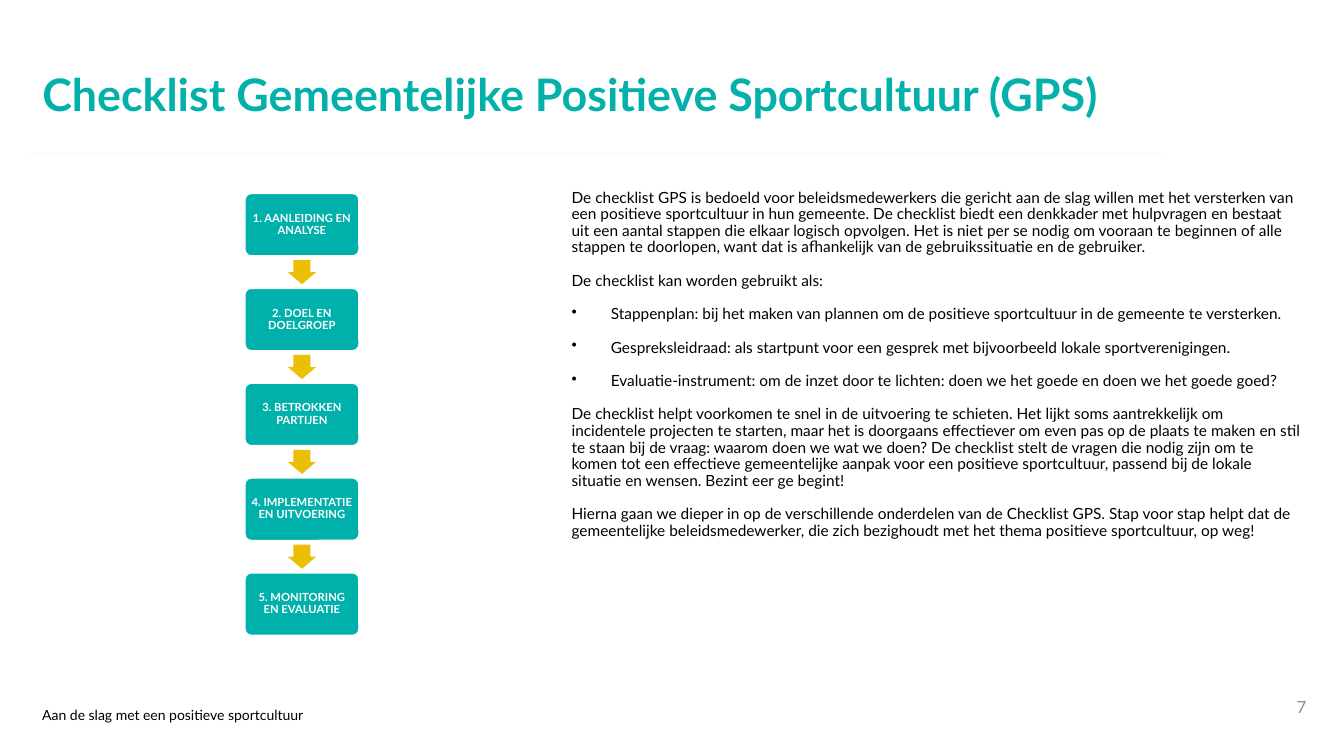
"""Build the slide that introduces the GPS checklist and its five steps."""
from lxml.etree import SubElement
from pptx import Presentation
from pptx.dml.color import RGBColor
from pptx.enum.shapes import MSO_CONNECTOR, MSO_SHAPE
from pptx.enum.text import MSO_ANCHOR, MSO_AUTO_SIZE, PP_ALIGN
from pptx.oxml.ns import qn
from pptx.util import Pt

TITLE_TEAL = RGBColor(0x03, 0xB0, 0xAA)
STEP_TEAL = RGBColor(0x00, 0xB1, 0xAB)
YELLOW = RGBColor(0xEA, 0xBF, 0x06)
PALE = RGBColor(0xF7, 0xF6, 0xF5)
GREY = RGBColor(0x8C, 0x8C, 0x8C)
BLACK = RGBColor(0, 0, 0)
WHITE = RGBColor(255, 255, 255)

STEPS = [
    "1. AANLEIDING EN ANALYSE",
    "2. DOEL EN DOELGROEP",
    "3. BETROKKEN PARTIJEN",
    "4. IMPLEMENTATIE EN UITVOERING",
    "5. MONITORING EN EVALUATIE",
]
STEP_LEFT, STEP_TOP, STEP_WIDTH, STEP_HEIGHT, STEP_PITCH = 175, 138.2, 81.4, 44.6, 67.75
ARROW_WIDTH, ARROW_HEIGHT, ARROW_OFFSET = 20.2, 17.2, 47.6

BODY = [
    (False, "De checklist GPS is bedoeld voor beleidsmedewerkers die gericht aan de slag willen "
            "met het versterken van een positieve sportcultuur in hun gemeente. De checklist biedt "
            "een denkkader met hulpvragen en bestaat uit een aantal stappen die elkaar logisch "
            "opvolgen. Het is niet per se nodig om vooraan te beginnen of alle stappen te doorlopen, "
            "want dat is afhankelijk van de gebruikssituatie en de gebruiker."),
    (False, "De checklist kan worden gebruikt als:"),
    (True, "Stappenplan: bij het maken van plannen om de positieve sportcultuur in de gemeente "
           "te versterken."),
    (True, "Gespreksleidraad: als startpunt voor een gesprek met bijvoorbeeld lokale "
           "sportverenigingen."),
    (True, "Evaluatie-instrument: om de inzet door te lichten: doen we het goede en doen we het "
           "goede goed?"),
    (False, "De checklist helpt voorkomen te snel in de uitvoering te schieten. Het lijkt soms "
            "aantrekkelijk om incidentele projecten te starten, maar het is doorgaans effectiever "
            "om even pas op de plaats te maken en stil te staan bij de vraag: waarom doen we wat we "
            "doen? De checklist stelt de vragen die nodig zijn om te komen tot een effectieve "
            "gemeentelijke aanpak voor een positieve sportcultuur, passend bij de lokale situatie "
            "en wensen. Bezint eer ge begint!"),
    (False, "Hierna gaan we dieper in op de verschillende onderdelen van de Checklist GPS. Stap "
            "voor stap helpt dat de gemeentelijke beleidsmedewerker, die zich bezighoudt met het "
            "thema positieve sportcultuur, op weg!"),
]


def set_frame(shape, inset, anchor):
    frame = shape.text_frame
    frame.word_wrap = True
    frame.auto_size = MSO_AUTO_SIZE.NONE
    frame.vertical_anchor = anchor
    frame.margin_left = frame.margin_right = Pt(inset)
    frame.margin_top = frame.margin_bottom = Pt(inset)
    return frame


def write(para, text, size, color, bold=False, align=PP_ALIGN.LEFT, spacing=0.9):
    para.alignment = align
    para.line_spacing = spacing
    span = para.add_run()
    span.text = text
    span.font.name = "Lato"
    span.font.size = Pt(size)
    span.font.bold = bold
    span.font.color.rgb = color


deck = Presentation()
deck.slide_width, deck.slide_height = Pt(960), Pt(540)
page = deck.slides.add_slide(deck.slide_layouts[5])
shapes = page.shapes

rule = shapes.add_connector(MSO_CONNECTOR.STRAIGHT, Pt(22.3), Pt(109.5), Pt(830.2), Pt(109.5))
rule.line.color.rgb = PALE
rule.line.width = Pt(0.5)
SubElement(rule.element.spPr, qn("a:effectLst"))

title = shapes.title
title.left, title.top, title.width, title.height = Pt(30.2), Pt(56.2), Pt(800), Pt(26)
frame = set_frame(title, 0, MSO_ANCHOR.MIDDLE)
write(frame.paragraphs[0], "Checklist Gemeentelijke Positieve Sportcultuur (GPS)", 32, TITLE_TEAL, bold=True)

for index, step in enumerate(STEPS):
    top = STEP_TOP + index * STEP_PITCH
    box = shapes.add_shape(MSO_SHAPE.ROUNDED_RECTANGLE, Pt(STEP_LEFT), Pt(top),
                           Pt(STEP_WIDTH), Pt(STEP_HEIGHT))
    box.adjustments[0] = 0.1
    box.shadow.inherit = False
    box.fill.solid()
    box.fill.fore_color.rgb = STEP_TEAL
    box.line.color.rgb = WHITE
    box.line.width = Pt(1)
    frame = set_frame(box, 2.2, MSO_ANCHOR.MIDDLE)
    write(frame.paragraphs[0], step, 8, WHITE, bold=True, align=PP_ALIGN.CENTER)
    if index < len(STEPS) - 1:
        arrow = shapes.add_shape(MSO_SHAPE.DOWN_ARROW,
                                 Pt(STEP_LEFT + (STEP_WIDTH - ARROW_WIDTH) / 2),
                                 Pt(top + ARROW_OFFSET), Pt(ARROW_WIDTH), Pt(ARROW_HEIGHT))
        arrow.adjustments[0] = 0.6
        arrow.adjustments[1] = 0.5
        arrow.shadow.inherit = False
        arrow.fill.solid()
        arrow.fill.fore_color.rgb = YELLOW
        arrow.line.fill.background()

body = shapes.add_textbox(Pt(405.4), Pt(132.6), Pt(527.8), Pt(351))
frame = set_frame(body, 2.9, MSO_ANCHOR.TOP)
for index, (bulleted, text) in enumerate(BODY):
    para = frame.add_paragraph() if index else frame.paragraphs[0]
    if bulleted:
        properties = para._p.get_or_add_pPr()
        properties.set("marL", str(Pt(28)))
        properties.set("indent", str(-Pt(28)))
        SubElement(properties, qn("a:buChar"), char="•")
    para.space_after = Pt(12)
    write(para, text, 11, BLACK)

footer = shapes.add_textbox(Pt(30.2), Pt(504.7), Pt(288), Pt(12.2))
frame = set_frame(footer, 0, MSO_ANCHOR.TOP)
write(frame.paragraphs[0], "Aan de slag met een positieve sportcultuur", 10, BLACK, spacing=1.0)

number = shapes.add_textbox(Pt(724.3), Pt(490.3), Pt(216), Pt(28.8))
frame = set_frame(number, 7.2, MSO_ANCHOR.MIDDLE)
write(frame.paragraphs[0], "7", 12, GREY, align=PP_ALIGN.RIGHT, spacing=1.0)

deck.save("out.pptx")
